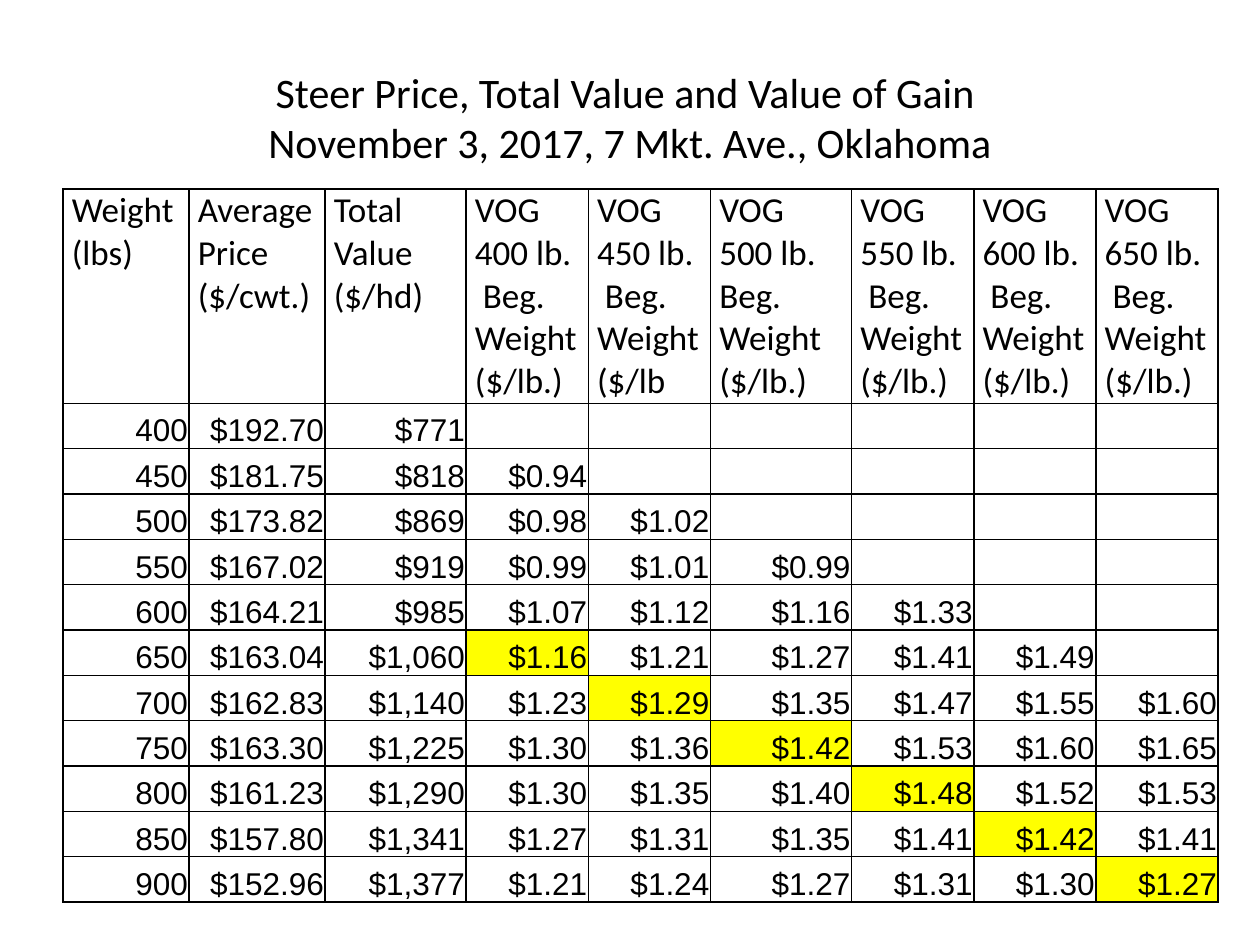
from lxml import etree
from pptx import Presentation
from pptx.dml.color import RGBColor
from pptx.enum.text import MSO_ANCHOR as Anchor, PP_ALIGN as Align
from pptx.oxml.ns import qn
from pptx.util import Inches, Pt

COLORS = {"text": "000000", "border": "000000", "cell": "FFFFFF", "highlight": "FFFF00"}
NBSP = chr(160)

TITLE = "Steer Price, Total Value and Value of Gain \vNovember 3, 2017, 7 Mkt. Ave., Oklahoma"
COLUMN_WIDTHS = [1, 1.08, 1.12, 0.97, 0.97, 1.12, 0.97, 0.97, 0.97]
HEADER_HEIGHT, ROW_HEIGHT = 1.68, 0.36
VOG_START = 3  # first value-of-gain column
HIGHLIGHT_GAIN = 250  # pounds gained in the highlighted cells
BEGIN_WEIGHTS = range(400, 700, 50)
UNITS = {450: "($/lb"}
GAPS = {500: NBSP + " "}
HEADERS = ["Weight (lbs)", "Average Price ($/cwt.)", "Total Value ($/hd)"] + [
    f"VOG\n{weight} lb.{GAPS.get(weight, ' ' + NBSP)}Beg. Weight\n{UNITS.get(weight, '($/lb.)')}"
    for weight in BEGIN_WEIGHTS
]
ROWS = [
    "400 $192.70 $771",
    "450 $181.75 $818 $0.94",
    "500 $173.82 $869 $0.98 $1.02",
    "550 $167.02 $919 $0.99 $1.01 $0.99",
    "600 $164.21 $985 $1.07 $1.12 $1.16 $1.33",
    "650 $163.04 $1,060 $1.16 $1.21 $1.27 $1.41 $1.49",
    "700 $162.83 $1,140 $1.23 $1.29 $1.35 $1.47 $1.55 $1.60",
    "750 $163.30 $1,225 $1.30 $1.36 $1.42 $1.53 $1.60 $1.65",
    "800 $161.23 $1,290 $1.30 $1.35 $1.40 $1.48 $1.52 $1.53",
    "850 $157.80 $1,341 $1.27 $1.31 $1.35 $1.41 $1.42 $1.41",
    "900 $152.96 $1,377 $1.21 $1.24 $1.27 $1.31 $1.30 $1.27",
]


def write_text(frame, text, font="Calibri", size=20, align=Align.LEFT):
    frame.text = text
    for paragraph in frame.paragraphs:
        paragraph.alignment = align
        for run in paragraph.runs:
            run.font.name = font
            run.font.size = Pt(size)
            run.font.color.rgb = RGBColor.from_string(COLORS["text"])


def format_cell(cell, color, margins, anchor):
    """Give the cell its borders, fill, margins (left, top, right, bottom) and anchor."""
    properties = cell._tc.get_or_add_tcPr()
    for side in ("a:lnL", "a:lnR", "a:lnT", "a:lnB"):
        line = etree.SubElement(properties, qn(side), w=str(Pt(1)))
        fill = etree.SubElement(line, qn("a:solidFill"))
        etree.SubElement(fill, qn("a:srgbClr"), val=COLORS["border"])
    cell.fill.solid()
    cell.fill.fore_color.rgb = RGBColor.from_string(COLORS[color])
    cell.margin_left, cell.margin_top, cell.margin_right, cell.margin_bottom = map(Inches, margins)
    cell.vertical_anchor = anchor


def is_highlighted(weight, column):
    if column < VOG_START:
        return False
    return weight - BEGIN_WEIGHTS[column - VOG_START] == HIGHLIGHT_GAIN


def place_title(slide, left, top, width, height):
    title = slide.shapes.title
    title.left, title.top, title.width, title.height = map(Inches, (left, top, width, height))
    title.text_frame.vertical_anchor = Anchor.MIDDLE
    write_text(title.text_frame, TITLE, size=24, align=Align.CENTER)


def place_price_table(slide, left, top, width, height):
    shape = slide.shapes.add_table(
        len(ROWS) + 1, len(HEADERS), *map(Inches, (left, top, width, height))
    )
    table = shape.table
    table.first_row = table.horz_banding = False
    for column, column_width in zip(table.columns, COLUMN_WIDTHS):
        column.width = Inches(column_width)
    for index, row in enumerate(table.rows):
        row.height = Inches(ROW_HEIGHT if index else HEADER_HEIGHT)

    for column, header in enumerate(HEADERS):
        cell = table.cell(0, column)
        format_cell(cell, "cell", (0.07, 0, 0.07, 0), Anchor.TOP)
        write_text(cell.text_frame, header)

    for row, line in enumerate(ROWS, start=1):
        values = line.split()
        for column in range(len(HEADERS)):
            cell = table.cell(row, column)
            color = "highlight" if is_highlighted(int(values[0]), column) else "cell"
            format_cell(cell, color, (0.01, 0.01, 0.01, 0), Anchor.BOTTOM)
            if column < len(values):
                write_text(cell.text_frame, values[column], font="Arial", size=18, align=Align.RIGHT)


def main():
    presentation = Presentation()
    presentation.slide_width, presentation.slide_height = Inches(10), Inches(7.5)
    slide = presentation.slides.add_slide(presentation.slide_layouts[5])
    place_title(slide, 0.5, 0.3, 9, 1.25)
    place_price_table(slide, 0.5, 1.5, sum(COLUMN_WIDTHS), HEADER_HEIGHT + ROW_HEIGHT * len(ROWS))
    presentation.save("out.pptx")


if __name__ == "__main__":
    main()
